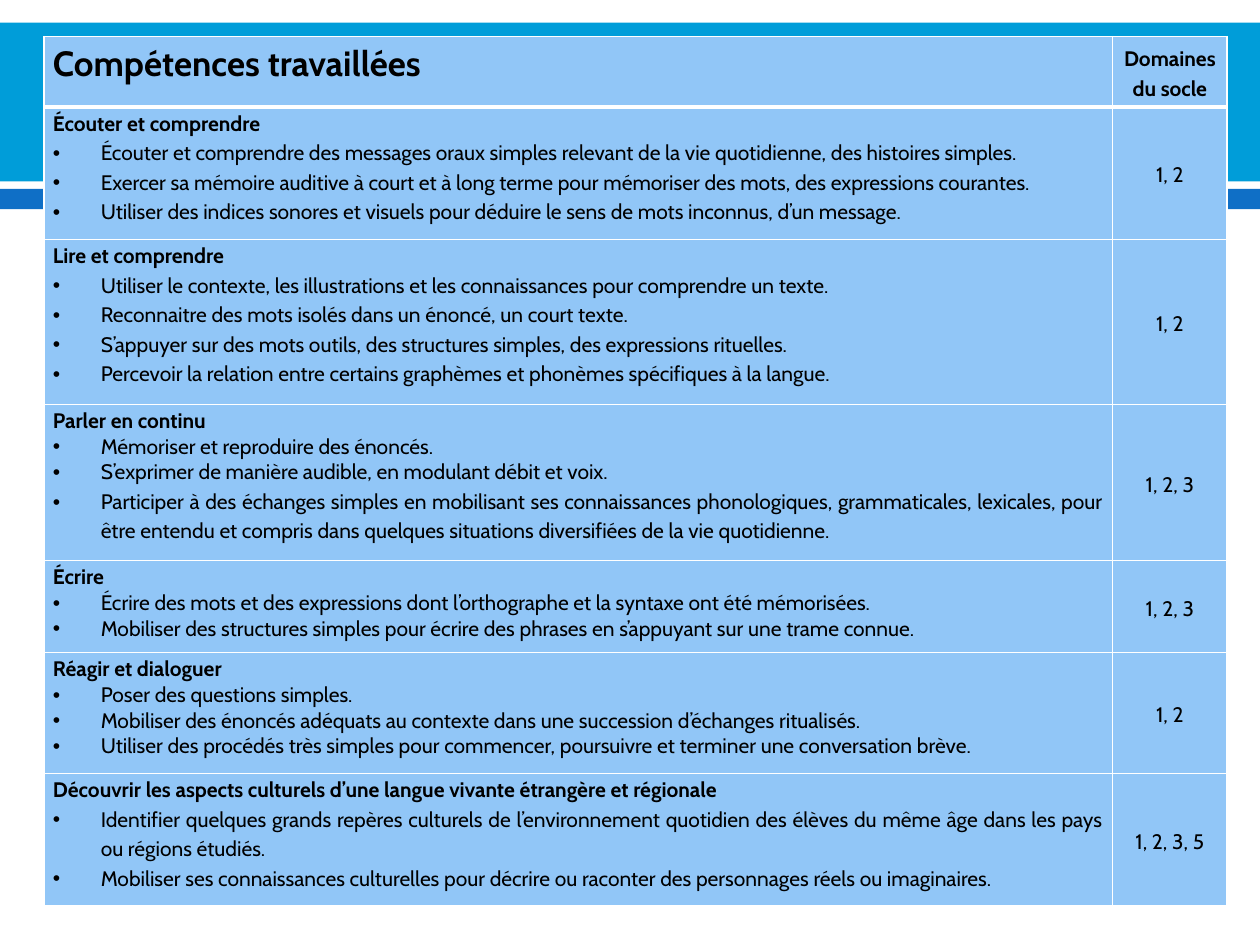
"""Build a slide with a table of language skills and their core domains."""
from dataclasses import dataclass

from lxml.etree import SubElement as Sub
from pptx import Presentation
from pptx.dml.color import RGBColor as Rgb
from pptx.enum.shapes import MSO_SHAPE as Form
from pptx.enum.text import MSO_ANCHOR as Anchor, PP_ALIGN as Align
from pptx.oxml.ns import qn
from pptx.util import Inches, Pt

HUES = {"sky": "009DD9", "blue": "0F6FC6", "cell": "91C6F7",
        "white": "FFFFFF", "black": "000000"}
FONT = "Cabin"
LOOSE = 1.15


@dataclass
class Band:
    top: float
    high: float
    hue: str


@dataclass
class Skill:
    name: str
    core: str
    high: float
    items: list[str]
    tight: int = 0


BANDS = [Band(0.18, 1.26, "sky"), Band(1.5, 0.16, "blue")]

SKILLS = [
    Skill("Écouter et comprendre", "1, 2", 1.05, [
        "Écouter et comprendre des messages oraux simples relevant de la vie "
        "quotidienne, des histoires simples.",
        "Exercer sa mémoire auditive à court et à long terme pour mémoriser "
        "des mots, des expressions courantes.",
        "Utiliser des indices sonores et visuels pour déduire le sens de mots "
        "inconnus, d’un message.",
    ]),
    Skill("Lire et comprendre", "1, 2", 1.31, [
        "Utiliser le contexte, les illustrations et les connaissances pour "
        "comprendre un texte.",
        "Reconnaitre des mots isolés dans un énoncé, un court texte.",
        "S’appuyer sur des mots outils, des structures simples, des "
        "expressions rituelles.",
        "Percevoir la relation entre certains graphèmes et phonèmes "
        "spécifiques à la langue.",
    ]),
    Skill("Parler en continu", "1, 2, 3", 1.24, [
        "Mémoriser et reproduire des énoncés.",
        "S’exprimer de manière audible, en modulant débit et voix.",
        "Participer à des échanges simples en mobilisant ses connaissances "
        "phonologiques, grammaticales, lexicales, pour être entendu et compris "
        "dans quelques situations diversifiées de la vie quotidienne.",
    ], tight=2),
    Skill("Écrire", "1, 2, 3", 0.73, [
        "Écrire des mots et des expressions dont l’orthographe et la syntaxe "
        "ont été mémorisées.",
        "Mobiliser des structures simples pour écrire des phrases en "
        "s’appuyant sur une trame connue.",
    ], tight=2),
    Skill("Réagir et dialoguer", "1, 2", 0.96, [
        "Poser des questions simples.",
        "Mobiliser des énoncés adéquats au contexte dans une succession "
        "d’échanges ritualisés.",
        "Utiliser des procédés très simples pour commencer, poursuivre et "
        "terminer une conversation brève.",
    ], tight=3),
    Skill("Découvrir les aspects culturels d’une langue vivante étrangère et "
          "régionale", "1, 2, 3, 5", 1.05, [
              "Identifier quelques grands repères culturels de l’environnement "
              "quotidien des élèves du même âge dans les pays ou régions "
              "étudiés.",
              "Mobiliser ses connaissances culturelles pour décrire ou "
              "raconter des personnages réels ou imaginaires.",
          ]),
]


def color(name: str) -> Rgb:
    return Rgb.from_string(HUES[name])


def draw_band(slide, band: Band, wide: int) -> None:
    box = slide.shapes.add_shape(Form.RECTANGLE, 0, Inches(band.top), wide,
                                 Inches(band.high))
    box.shadow.inherit = False
    box.fill.solid()
    box.fill.fore_color.rgb = color(band.hue)
    box.line.fill.background()


def style_cell(cell, row: int, anchor: Anchor) -> None:
    cell.margin_left = cell.margin_right = Inches(0.07)
    cell.margin_top = cell.margin_bottom = 0
    cell.vertical_anchor = anchor
    props = cell._tc.get_or_add_tcPr()
    thick = {("lnB", 0), ("lnT", 1)}
    for side in ("lnL", "lnR", "lnT", "lnB"):
        size = Pt(3 if (side, row) in thick else 1)
        line = Sub(props, qn(f"a:{side}"), w=str(size))
        fill = Sub(line, qn("a:solidFill"))
        Sub(fill, qn("a:srgbClr"), val=HUES["white"])
    cell.fill.solid()
    cell.fill.fore_color.rgb = color("cell")


def write(cell, text: str, *, size: float = 12, bold: bool = False,
          align: Align = Align.JUSTIFY, space: float = LOOSE,
          bullet: bool = False) -> None:
    frame = cell.text_frame
    first = frame.paragraphs[0]
    para = frame.add_paragraph() if first.runs else first
    para.alignment = align
    para.line_spacing = space
    run = para.add_run()
    run.text = text
    font = run.font
    font.name, font.size, font.bold = FONT, Pt(size), bold
    font.color.rgb = color("black")
    if bullet:
        props = para._p.get_or_add_pPr()
        props.set("marL", str(Inches(0.38)))
        props.set("indent", str(-Inches(0.38)))
        Sub(props, qn("a:buFont"), typeface="Arial")
        Sub(props, qn("a:buChar"), char="•")


def draw_table(slide, skills: list[Skill]) -> None:
    highs = [0.56] + [skill.high for skill in skills]
    wides = [8.48, 0.91]
    table = slide.shapes.add_table(
        len(highs), len(wides), Inches(0.35), Inches(0.29),
        Inches(sum(wides)), Inches(sum(highs))).table
    for col, wide in zip(table.columns, wides):
        col.width = Inches(wide)
    for i, high in enumerate(highs):
        table.rows[i].height = Inches(high)
        style_cell(table.cell(i, 0), i, Anchor.TOP)
        style_cell(table.cell(i, 1), i, Anchor.MIDDLE)

    write(table.cell(0, 0), "Compétences travaillées", size=20, bold=True,
          align=Align.LEFT)
    write(table.cell(0, 1), "Domaines du socle", bold=True,
          align=Align.CENTER)
    for i, skill in enumerate(skills, 1):
        cell = table.cell(i, 0)
        write(cell, skill.name, bold=True)
        for j, item in enumerate(skill.items):
            write(cell, item, bullet=True,
                  space=1.0 if j < skill.tight else LOOSE)
        write(table.cell(i, 1), skill.core, align=Align.CENTER)


def main() -> None:
    deck = Presentation()
    deck.slide_width, deck.slide_height = Inches(10), Inches(7.5)
    slide = deck.slides.add_slide(deck.slide_layouts[6])
    for band in BANDS:
        draw_band(slide, band, deck.slide_width)
    draw_table(slide, SKILLS)
    deck.save("out.pptx")


if __name__ == "__main__":
    main()
